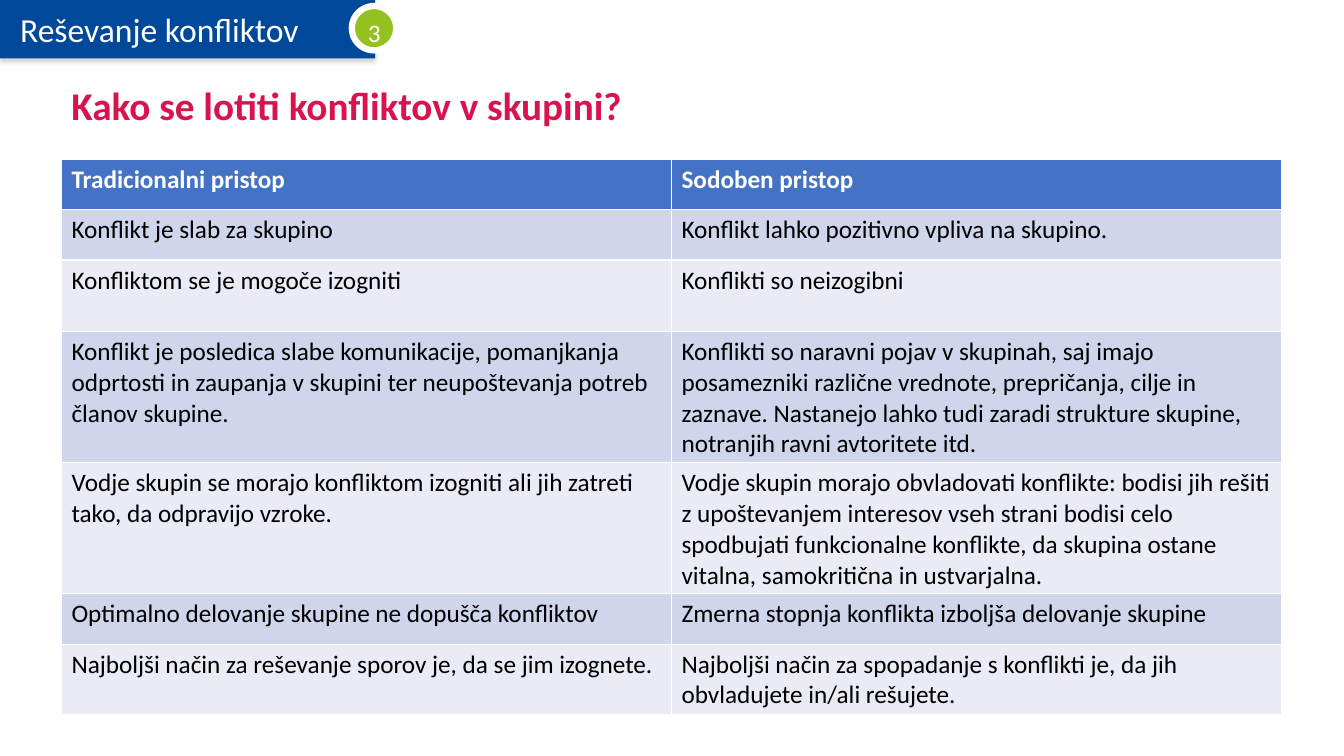
import pptx
import pptx.util
import pptx.oxml
import pptx.oxml.ns
import pptx.dml.color
import pptx.enum.shapes
import pptx.enum.text
from dataclasses import dataclass

Inches = pptx.util.Inches
Pt = pptx.util.Pt
Anchor = pptx.enum.text.MSO_ANCHOR
Kind = pptx.enum.shapes.MSO_SHAPE


@dataclass(frozen=True)
class Theme:
    font: str = "Calibri"
    white: str = "FFFFFF"
    black: str = "000000"
    navy: str = "004899"
    green: str = "95C11F"
    red: str = "D8134D"
    head: str = "4472C4"
    bands: tuple = ("CFD5EA", "E9EBF5")
    title: int = 28
    topic: int = 24
    body: int = 18


theme = Theme()


def rgb(code):
    return pptx.dml.color.RGBColor.from_string(code)


def write(frame, text, size, color, bold=False):
    """Put one styled paragraph in a text frame and return it."""
    frame.text = text
    frame.word_wrap = True
    para = frame.paragraphs[0]
    font = para.runs[0].font
    font.name, font.size, font.bold = theme.font, Pt(size), bold
    font.color.rgb = rgb(color)
    return para


deck = pptx.Presentation()
deck.slide_width, deck.slide_height = Inches(13.33), Inches(7.5)
slide = deck.slides.add_slide(deck.slide_layouts[6])
shapes = slide.shapes

# Topic banner with a soft shadow below it
banner = shapes.add_shape(Kind.RECTANGLE, 0, 0, Inches(3.72), Inches(0.58))
banner.fill.solid()
banner.fill.fore_color.rgb = rgb(theme.navy)
banner.line.fill.background()
banner.shadow.inherit = False
effects = banner.element.spPr.find(pptx.oxml.ns.qn("a:effectLst"))
effects.append(pptx.oxml.parse_xml(
    f'<a:outerShdw {pptx.oxml.ns.nsdecls("a")} blurRad="{Pt(3.1)}" '
    f'dist="{Pt(1.8)}" dir="5400000" algn="t" rotWithShape="0">'
    '<a:srgbClr val="808080"><a:alpha val="35000"/></a:srgbClr></a:outerShdw>'))
frame = banner.text_frame
frame.margin_left = Inches(0.2)
frame.vertical_anchor = Anchor.MIDDLE
para = write(frame, "Reševanje konfliktov", theme.topic, theme.white)
para.alignment = pptx.enum.text.PP_ALIGN.LEFT

# Slide number badge
badge = shapes.add_shape(Kind.OVAL, Inches(3.49), Inches(0.06),
                         Inches(0.44), Inches(0.44))
badge.fill.solid()
badge.fill.fore_color.rgb = rgb(theme.green)
badge.line.color.rgb = rgb(theme.white)
badge.line.width = Pt(4.5)
badge.shadow.inherit = False
number = shapes.add_textbox(Inches(3.55), Inches(-0.03),
                            Inches(0.35), Inches(0.51))
para = write(number.text_frame, "3", theme.body, theme.white)
para.line_spacing = 1.5

# Title
title = shapes.add_textbox(Inches(0.61), Inches(0.74),
                           Inches(12.1), Inches(0.66))
title.text_frame.vertical_anchor = Anchor.MIDDLE
para = write(title.text_frame, "Kako se lotiti konfliktov v skupini?",
             theme.title, theme.red, True)
para.line_spacing = 0.9

# Comparison table: row height, traditional view, modern view
rows = [
    (0.5, "Tradicionalni pristop", "Sodoben pristop"),
    (0.5, "Konflikt je slab za skupino",
     "Konflikt lahko pozitivno vpliva na skupino."),
    (0.71, "Konfliktom se je mogoče izogniti", "Konflikti so neizogibni"),
    (1.25, "Konflikt je posledica slabe komunikacije, pomanjkanja odprtosti "
     "in zaupanja v skupini ter neupoštevanja potreb članov skupine.",
     "Konflikti so naravni pojav v skupinah, saj imajo posamezniki različne "
     "vrednote, prepričanja, cilje in zaznave. Nastanejo lahko tudi zaradi "
     "strukture skupine, notranjih ravni avtoritete itd."),
    (1.25, "Vodje skupin se morajo konfliktom izogniti ali jih zatreti tako, "
     "da odpravijo vzroke.",
     "Vodje skupin morajo obvladovati konflikte: bodisi jih rešiti z "
     "upoštevanjem interesov vseh strani bodisi celo spodbujati funkcionalne "
     "konflikte, da skupina ostane vitalna, samokritična in ustvarjalna."),
    (0.5, "Optimalno delovanje skupine ne dopušča konfliktov",
     "Zmerna stopnja konflikta izboljša delovanje skupine"),
    (0.5, "Najboljši način za reševanje sporov je, da se jim izognete.",
     "Najboljši način za spopadanje s konflikti je, da jih obvladujete "
     "in/ali rešujete."),
]
height = Inches(sum(row[0] for row in rows))
table = shapes.add_table(len(rows), 2, Inches(0.61), Inches(1.58),
                         Inches(12.1), height).table
for r, (tall, *texts) in enumerate(rows):
    table.rows[r].height = Inches(tall)
    top = r == 0
    for c, text in enumerate(texts):
        cell = table.cell(r, c)
        cell.fill.solid()
        cell.fill.fore_color.rgb = rgb(theme.head if top
                                       else theme.bands[(r - 1) % 2])
        write(cell.text_frame, text, theme.body,
              theme.white if top else theme.black, top)

deck.save("out.pptx")
